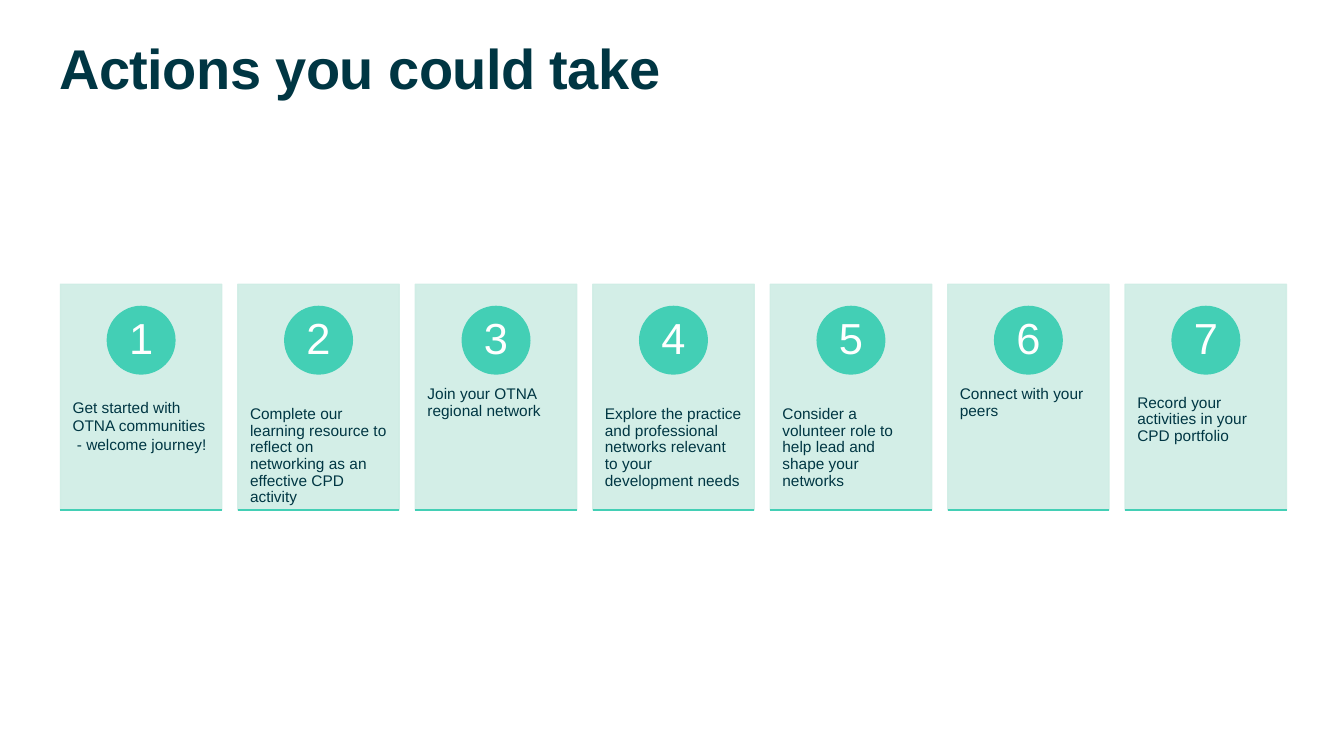
from lxml import etree
from pptx import Presentation
from pptx.dml.color import RGBColor
from pptx.enum import shapes, text
from pptx.oxml import ns
from pptx.util import Inches, Pt

TITLE = "Actions you could take"
ACTIONS = [
    "Get started with OTNA communities  - welcome journey!",
    "Complete our learning resource to reflect on networking as an effective CPD activity",
    "Join your OTNA regional network",
    "Explore the practice and professional networks relevant to your development needs",
    "Consider a volunteer role to help lead and shape your networks",
    "Connect with your peers",
    "Record your activities in your CPD portfolio",
]

FONT = "Arial"
NAVY = RGBColor(0x00, 0x36, 0x43)
TEAL = RGBColor(0x43, 0xCF, 0xB5)
MINT = RGBColor(0xCF, 0xED, 0xE5)
WHITE = RGBColor(0xFF, 0xFF, 0xFF)

CARD_LEFT, CARD_TOP, CARD_WIDTH, CARD_HEIGHT = 0.6, 2.82, 1.6, 2.24
CARD_PITCH = 1.76
CIRCLE_TOP, CIRCLE_SIZE = 3.04, 0.67
LABEL_TOP, LABEL_HEIGHT = 3.67, 1.34


def write(shape, words, size, color, insets, line_spacing=0.9):
    """Fill a shape with one paragraph; insets are (horizontal, vertical) inches."""
    frame = shape.text_frame
    frame.word_wrap = True
    frame.margin_left = frame.margin_right = Inches(insets[0])
    frame.margin_top = frame.margin_bottom = Inches(insets[1])
    frame.text = words
    paragraph = frame.paragraphs[0]
    paragraph.line_spacing = line_spacing
    font = paragraph.runs[0].font
    font.name, font.size = FONT, Pt(size)
    font.color.rgb = color
    return paragraph


def add_filled(slide, kind, left, top, width, height, color):
    shape = slide.shapes.add_shape(
        kind, Inches(left), Inches(top), Inches(width), Inches(height))
    shape.shadow.inherit = False
    shape.fill.solid()
    shape.fill.fore_color.rgb = color
    shape.line.color.rgb = color
    shape.line.width = Pt(1)
    return shape


def add_textbox(slide, left, top, width, height):
    return slide.shapes.add_textbox(
        Inches(left), Inches(top), Inches(width), Inches(height))


def add_card(slide, number, action):
    left = CARD_LEFT + (number - 1) * CARD_PITCH
    bottom = CARD_TOP + CARD_HEIGHT

    card = add_filled(slide, shapes.MSO_SHAPE.RECTANGLE,
                      left, CARD_TOP, CARD_WIDTH, CARD_HEIGHT, MINT)
    for color in card.element.spPr.iter(ns.qn("a:srgbClr")):
        etree.SubElement(color, ns.qn("a:alpha"), val="90000")

    label = add_textbox(slide, left, LABEL_TOP, CARD_WIDTH, LABEL_HEIGHT)
    write(label, action, 11, NAVY, (0.12, 0.36),
          line_spacing=1.0 if number == 1 else 0.9)

    circle = add_filled(slide, shapes.MSO_SHAPE.OVAL,
                        left + (CARD_WIDTH - CIRCLE_SIZE) / 2, CIRCLE_TOP,
                        CIRCLE_SIZE, CIRCLE_SIZE, TEAL)
    circle.text_frame.vertical_anchor = text.MSO_ANCHOR.MIDDLE
    digit = write(circle, str(number), 31, WHITE, (0.05, 0.01))
    digit.alignment = text.PP_ALIGN.CENTER

    rule = slide.shapes.add_connector(
        shapes.MSO_CONNECTOR.STRAIGHT, Inches(left), Inches(bottom),
        Inches(left + CARD_WIDTH), Inches(bottom))
    rule.line.color.rgb = TEAL
    rule.line.width = Pt(1)
    etree.SubElement(rule.element.spPr, ns.qn("a:effectLst"))


def main():
    deck = Presentation()
    deck.slide_width, deck.slide_height = Inches(13.33), Inches(7.5)
    slide = deck.slides.add_slide(deck.slide_layouts[6])

    heading = write(add_textbox(slide, 0.59, 0.41, 12.18, 0.79),
                    TITLE, 40, NAVY, (0, 0))
    heading.runs[0].font.bold = True
    heading.runs[0].font._element.set("spc", "-40")

    for number, action in enumerate(ACTIONS, start=1):
        add_card(slide, number, action)

    deck.save("out.pptx")


if __name__ == "__main__":
    main()
